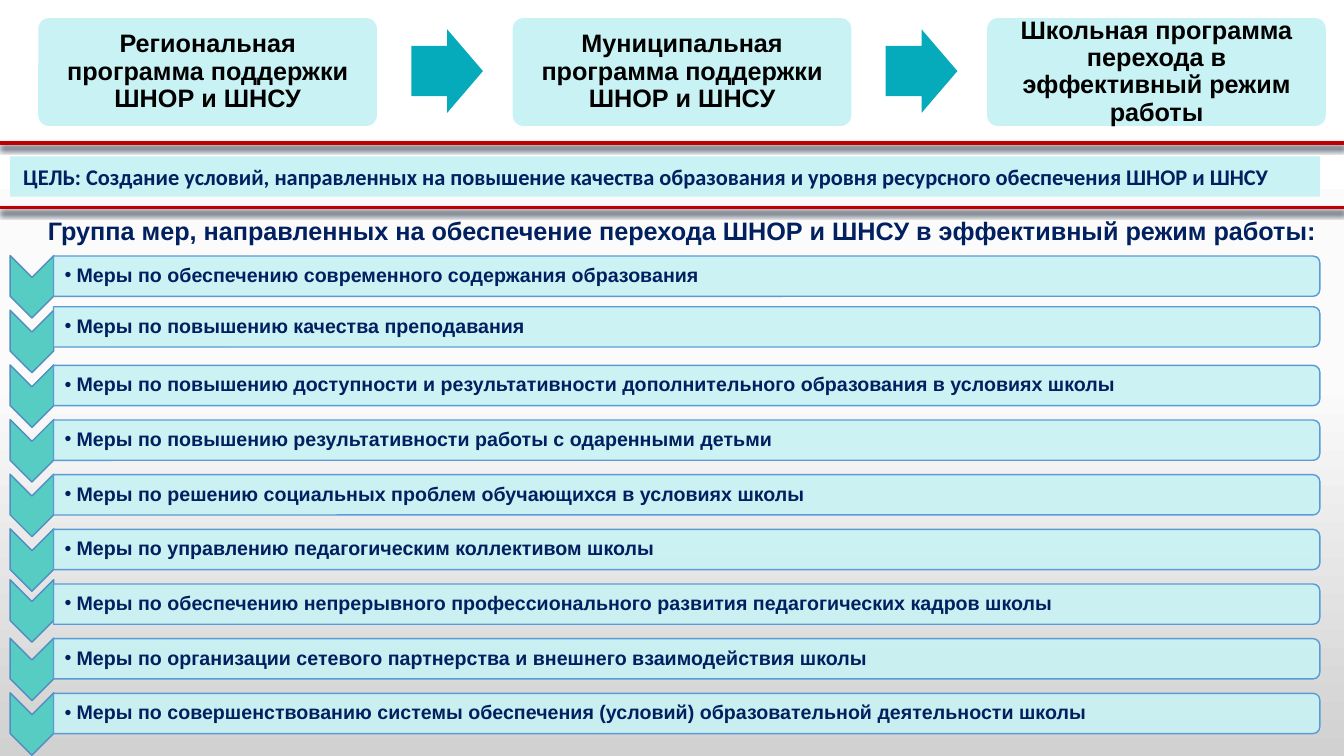
import copy
from dataclasses import dataclass

import lxml.etree
import pptx
import pptx.dml.color
import pptx.enum.dml
import pptx.enum.shapes
import pptx.enum.text
import pptx.oxml.ns
import pptx.util

Form = pptx.enum.shapes.MSO_SHAPE
Align = pptx.enum.text.PP_ALIGN
Anchor = pptx.enum.text.MSO_ANCHOR
qn = pptx.oxml.ns.qn


@dataclass(frozen=True)
class Theme:
    pale: str = "C8F2F4"
    mint: str = "56CCC3"
    teal: str = "05AABB"
    navy: str = "002060"
    black: str = "000000"
    red: str = "C00000"
    shade: str = "333F50"
    edge: str = "5B9BD5"
    rim: str = "538DC1"
    sky: tuple = ((0, "FFFFFF"), (0.5, "FBFBFB"), (1, "D1D1D1"))
    sans: str = "Arial"
    goal: str = "Calibri"
    head: int = 18
    mid: int = 16
    small: int = 14


def rgb(code):
    return pptx.dml.color.RGBColor.from_string(code)


def add(parent, tag, **attrs):
    node = lxml.etree.SubElement(parent, qn(tag))
    for key, value in attrs.items():
        node.set(key, str(value))
    return node


def write(frame, text, *, font, size, color, align=Align.LEFT, anchor=Anchor.TOP,
          pad=(0.13, 0.07, 0.13, 0.07), space=1.0, dot=None):
    frame.word_wrap = True
    frame.auto_size = pptx.enum.text.MSO_AUTO_SIZE.NONE
    frame.vertical_anchor = anchor
    (frame.margin_left, frame.margin_top,
     frame.margin_right, frame.margin_bottom) = map(pptx.util.Inches, pad)
    para = frame.paragraphs[0]
    para.alignment = align
    para.line_spacing = space
    if dot:
        para.level = 1
        props = para._p.get_or_add_pPr()
        hang = pptx.util.Inches(0.12)
        props.set("marL", str(hang))
        props.set("indent", str(-hang))
        add(props, "a:buFont", typeface=font)
        add(props, "a:buChar", char=dot)
    run = para.add_run()
    run.text = text
    run.font.name = font
    run.font.size = pptx.util.Pt(size)
    run.font.bold = True
    run.font.color.rgb = rgb(color)


class Board:
    """Positions and sizes are percentages of the slide's width and height."""

    def __init__(self, deck, theme):
        self.deck = deck
        self.theme = theme
        self.slide = deck.slides.add_slide(deck.slide_layouts[5])

    def box(self, x, y, w, h):
        wide, high = self.deck.slide_width / 100, self.deck.slide_height / 100
        return [round(part) for part in (x * wide, y * high, w * wide, h * high)]

    def sky(self):
        fill = self.slide.background.fill
        fill.gradient()
        fill.gradient_angle = 270
        stops = self.slide.element.find(".//" + qn("a:gsLst"))
        stops.insert(1, copy.deepcopy(stops[0]))
        for stop, (place, color) in zip(fill.gradient_stops, self.theme.sky):
            stop.position = place
            stop.color.rgb = rgb(color)

    def title(self, text, *area, **style):
        holder = self.slide.shapes.title
        holder.left, holder.top, holder.width, holder.height = self.box(*area)
        write(holder.text_frame, text, **style)

    def label(self, text, *area, **style):
        write(self.slide.shapes.add_textbox(*self.box(*area)).text_frame, text, **style)

    def shape(self, form, *area, fill, line=None, turn=False, bends=(), alpha=None):
        x, y, w, h = self.box(*area)
        if turn:
            x, y, w, h = x + (w - h) // 2, y + (h - w) // 2, h, w
        item = self.slide.shapes.add_shape(form, x, y, w, h)
        item.rotation = 90 if turn else 0
        item.shadow.inherit = False
        for index, bend in enumerate(bends):
            item.adjustments[index] = bend
        item.fill.solid()
        item.fill.fore_color.rgb = rgb(fill)
        if alpha:
            tint = item.element.spPr.find(qn("a:solidFill"))[0]
            add(tint, "a:alpha", val=alpha * 1000)
        if line:
            item.line.color.rgb = rgb(line)
            item.line.width = pptx.util.Pt(1)
        else:
            item.line.fill.background()
        return item

    def rule(self, y):
        x, top, wide, _ = self.box(0, y, 100, 0)
        item = self.slide.shapes.add_connector(
            pptx.enum.shapes.MSO_CONNECTOR.STRAIGHT, x, top, x + wide, top)
        item.line.color.rgb = rgb(self.theme.red)
        item.line.width = pptx.util.Pt(2.5)
        glow = add(add(item.element.spPr, "a:effectLst"), "a:outerShdw",
                   blurRad=pptx.util.Pt(4), dist=pptx.util.Pt(3),
                   dir=90 * 60000, algn="t", rotWithShape=0)
        add(glow, "a:srgbClr", val=self.theme.shade)


STEPS = (
    "Региональная программа поддержки ШНОР и ШНСУ",
    "Муниципальная программа поддержки ШНОР и ШНСУ",
    "Школьная программа перехода в эффективный режим работы",
)
TASKS = (
    "Меры по обеспечению современного содержания образования",
    "Меры по повышению качества преподавания",
    "Меры по повышению доступности и результативности дополнительного образования в условиях школы",
    "Меры по повышению результативности работы с одаренными детьми",
    "Меры по решению социальных проблем обучающихся в условиях школы",
    "Меры по управлению педагогическим коллективом школы",
    "Меры по обеспечению непрерывного профессионального развития педагогических кадров школы",
    "Меры по организации сетевого партнерства и внешнего взаимодействия школы",
    "Меры по совершенствованию системы обеспечения (условий) образовательной деятельности школы",
)
GOAL = ("ЦЕЛЬ: Создание условий, направленных на повышение качества образования "
        "и уровня ресурсного обеспечения ШНОР и ШНСУ")
HEAD = "Группа мер, направленных на обеспечение перехода ШНОР и ШНСУ в эффективный режим работы:"
BAR_SHIFT = {1: -0.53}
TIP_SHIFT = {6: -0.5}


def main():
    theme = Theme()
    deck = pptx.Presentation()
    deck.slide_width = pptx.util.Inches(13.33)
    deck.slide_height = pptx.util.Inches(7.5)
    board = Board(deck, theme)
    board.sky()

    goal = board.shape(Form.RECTANGLE, 0.75, 20.67, 97.45, 5.33, fill=theme.pale)
    write(goal.text_frame, GOAL, font=theme.goal, size=theme.mid, color=theme.navy)
    board.title(HEAD, 0.75, 27.6, 100, 5.87, font=theme.sans, size=theme.head,
                color=theme.navy, align=Align.CENTER)

    for row, task in enumerate(TASKS):
        drop = row * 7.23
        tip = 33.8 + drop + TIP_SHIFT.get(row, 0)
        bar = 33.87 + drop + BAR_SHIFT.get(row, 0)
        board.shape(Form.CHEVRON, 0.75, tip, 3.25, 8.27, turn=True,
                    fill=theme.mint, line=theme.rim)
        board.shape(Form.ROUND_2_SAME_RECTANGLE, 3.98, bar, 94.22, 5.33, turn=True,
                    fill=theme.pale, line=theme.edge, alpha=90)
        board.label(task, 3.98, bar + 0.27, 94.07, 4.8, font=theme.sans,
                    size=theme.small, color=theme.navy, anchor=Anchor.MIDDLE,
                    pad=(0.11, 0.01, 0.01, 0.01), space=0.9, dot="•")

    for col, step in enumerate(STEPS):
        x = 2.85 + col * 35.3
        board.shape(Form.ROUNDED_RECTANGLE, x, 2.4, 25.2, 14.27,
                    fill=theme.pale, bends=(0.1,))
        board.label(step, x + 0.23, 2.8, 24.75, 13.47, font=theme.sans,
                    size=theme.head, color=theme.black, align=Align.CENTER,
                    anchor=Anchor.MIDDLE, pad=(0.07,) * 4, space=0.9)
        if col < len(STEPS) - 1:
            board.shape(Form.RIGHT_ARROW, x + 27.75, 3.87, 5.33, 11.07,
                        fill=theme.teal, bends=(0.6, 0.5))

    for y in (18.93, 27.47):
        board.rule(y)
    deck.save("out.pptx")


if __name__ == "__main__":
    main()
